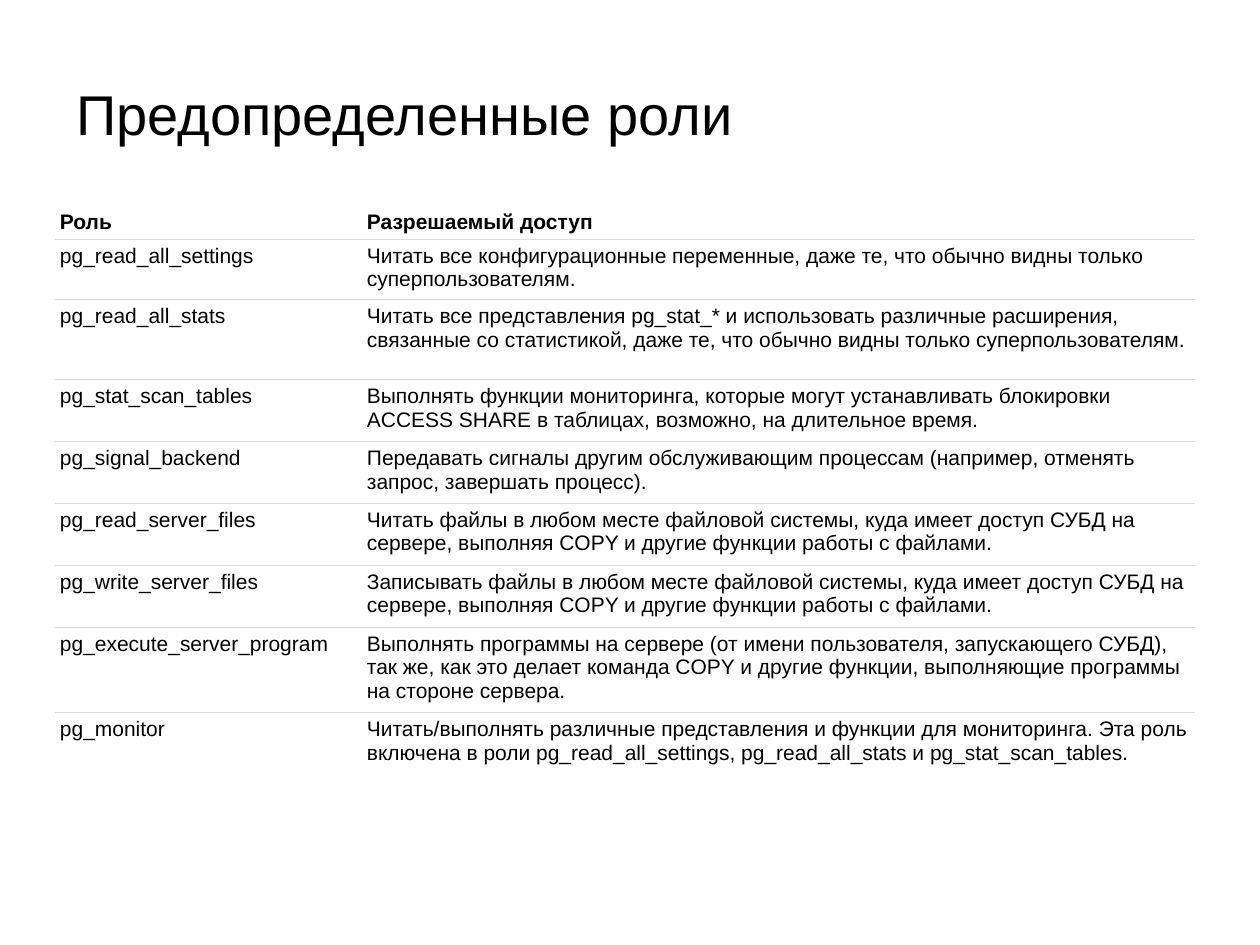
import pptx
import pptx.util
import pptx.dml.color
import pptx.enum.text
import pptx.oxml.ns
import lxml.etree

PX = 914400 // 126
FONT = "Arial"
BLACK, WHITE, GREY = "000000", "FFFFFF", "DDDDDD"
HEIGHTS = [33, 57, 80, 62, 62, 62, 62, 80, 80]
WIDTHS = [307, 833]
ROLES = [
    ("Роль", "Разрешаемый доступ"),
    ("pg_read_all_settings",
     "Читать все конфигурационные переменные, даже те, что обычно видны только "
     "суперпользователям."),
    ("pg_read_all_stats",
     "Читать все представления pg_stat_* и использовать различные расширения, "
     "связанные со статистикой, даже те, что обычно видны только суперпользователям."),
    ("pg_stat_scan_tables",
     "Выполнять функции мониторинга, которые могут устанавливать "
     "блокировки ACCESS SHARE в таблицах, возможно, на длительное время."),
    ("pg_signal_backend",
     "Передавать сигналы другим обслуживающим процессам (например, отменять "
     "запрос, завершать процесс)."),
    ("pg_read_server_files",
     "Читать файлы в любом месте файловой системы, куда имеет доступ СУБД на "
     "сервере, выполняя COPY и другие функции работы с файлами."),
    ("pg_write_server_files",
     "Записывать файлы в любом месте файловой системы, куда имеет доступ СУБД на "
     "сервере, выполняя COPY и другие функции работы с файлами."),
    ("pg_execute_server_program",
     "Выполнять программы на сервере (от имени пользователя, запускающего СУБД), "
     "так же, как это делает команда COPY и другие функции, выполняющие программы "
     "на стороне сервера."),
    ("pg_monitor",
     "Читать/выполнять различные представления и функции для мониторинга. Эта роль "
     "включена в роли pg_read_all_settings, pg_read_all_stats и pg_stat_scan_tables."),
]


def px(n):
    """Turn px into EMU."""
    return pptx.util.Emu(n * PX)


def paint(fmt, hue):
    """Give a fill or font colour format a hex colour."""
    fmt.rgb = pptx.dml.color.RGBColor.from_string(hue)


def write(para, text, size, bold=False):
    """Put styled text in a paragraph."""
    para.text = text
    font = para.font
    font.name, font.size, font.bold = FONT, pptx.util.Pt(size), bold
    paint(font.color, BLACK)


def rule(cell, sides):
    """Draw grey borders on the named sides and clear the others."""
    props = cell._tc.get_or_add_tcPr()
    for i, side in enumerate("LRTB"):
        line = lxml.etree.Element(pptx.oxml.ns.qn("a:ln" + side), w="9525")
        kind = "a:solidFill" if side in sides else "a:noFill"
        fill = lxml.etree.SubElement(line, pptx.oxml.ns.qn(kind))
        if side in sides:
            lxml.etree.SubElement(fill, pptx.oxml.ns.qn("a:srgbClr"), val=GREY)
        props.insert(i, line)


def title(slide, text, x, y, w, h):
    """Place the slide title in its box."""
    frame = slide.shapes.add_textbox(px(x), px(y), px(w), px(h)).text_frame
    frame.word_wrap = True
    frame.margin_top = px(14)
    write(frame.paragraphs[0], text, 32)


def table(slide, data, x, y, w, h):
    """Place the table of roles in its box."""
    grid = slide.shapes.add_table(len(data), len(WIDTHS), px(x), px(y), px(w), px(h)).table
    grid.horz_banding = grid.first_row = False
    for col, width in zip(grid.columns, WIDTHS):
        col.width = px(width)
    last = len(data) - 1
    for r, texts in enumerate(data):
        grid.rows[r].height = px(HEIGHTS[r])
        sides = ("T" if r else "") + ("B" if r < last else "")
        for c, text in enumerate(texts):
            cell = grid.cell(r, c)
            cell.margin_left = cell.margin_right = px(5)
            cell.margin_top = cell.margin_bottom = px(5)
            anchor = pptx.enum.text.MSO_ANCHOR
            cell.vertical_anchor = anchor.TOP if r else anchor.BOTTOM
            cell.fill.solid()
            paint(cell.fill.fore_color, WHITE)
            rule(cell, sides)
            write(cell.text_frame.paragraphs[0], text, 12, r == 0)


def main():
    """Build and save the slide."""
    deck = pptx.Presentation()
    deck.slide_width, deck.slide_height = px(1260), px(945)
    slide = deck.slides.add_slide(deck.slide_layouts[6])
    title(slide, "Предопределенные роли", 64, 66, 1152, 863)
    table(slide, ROLES, 55, 204, sum(WIDTHS), sum(HEIGHTS))
    deck.save("out.pptx")


if __name__ == "__main__":
    main()
